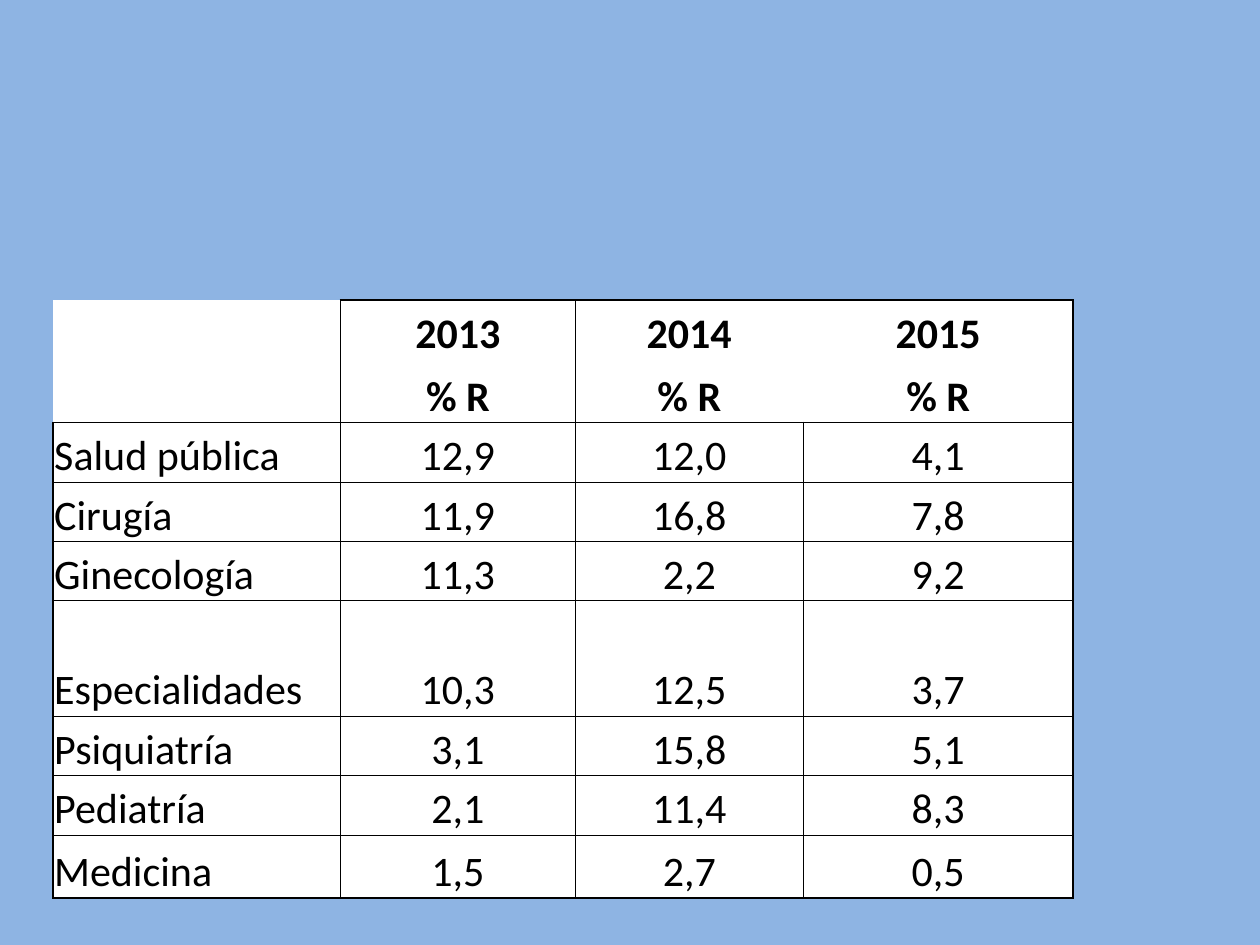
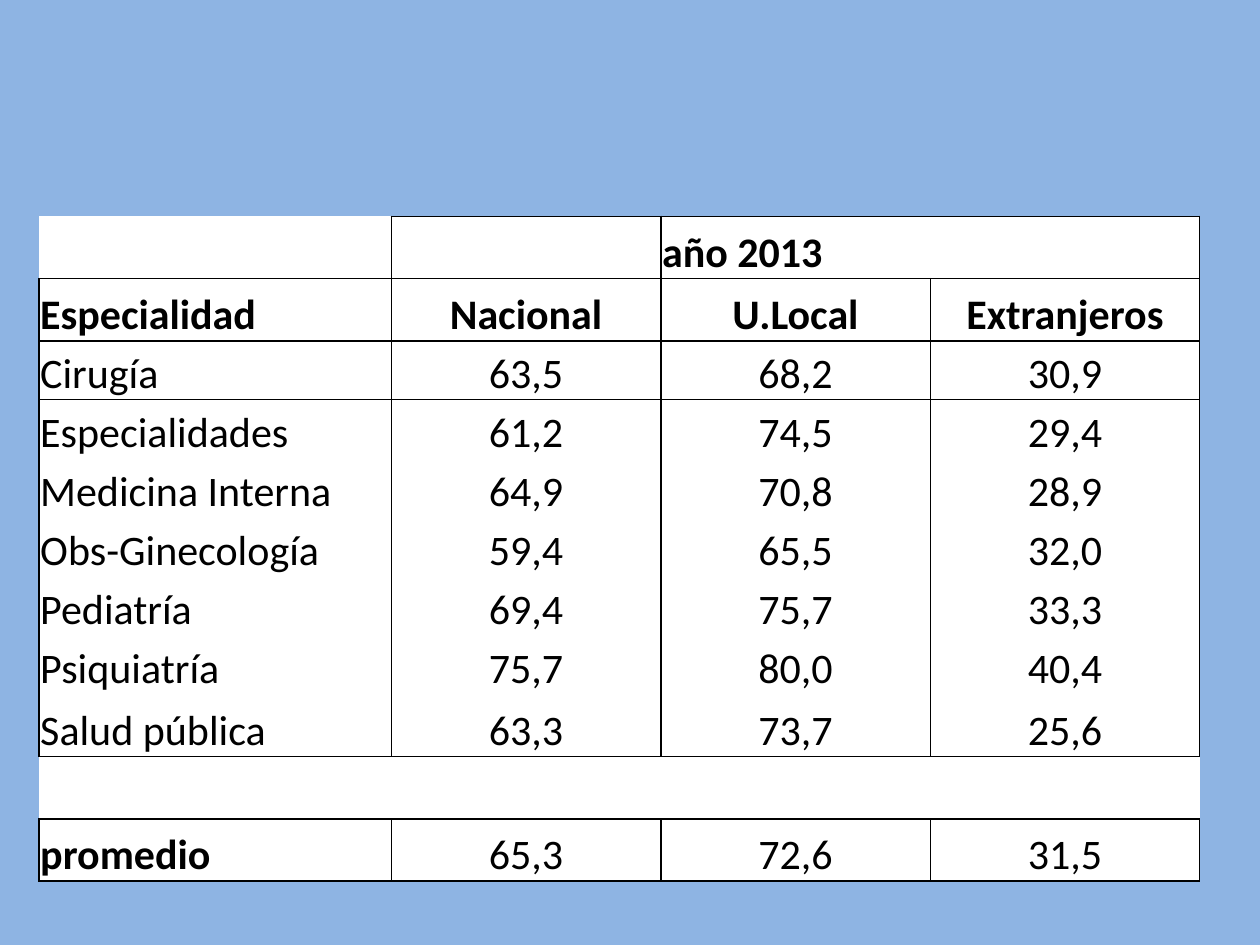
"""Builds two slides with tables of results by medical speciality."""
from lxml import etree
from pptx import Presentation
from pptx.dml.color import RGBColor
from pptx.enum.text import MSO_ANCHOR, PP_ALIGN
from pptx.oxml.ns import qn
from pptx.util import Pt

BACKGROUND = RGBColor(0x8E, 0xB4, 0xE3)
WHITE = RGBColor(0xFF, 0xFF, 0xFF)
BLACK = RGBColor(0x00, 0x00, 0x00)
FONT = "Calibri"
TEXT_SIZE = 24
CELL_INSET = 0.75
THIN, MEDIUM = 0.5, 1
PLAIN_TABLE_STYLE = "{2D5ABB26-0587-4C30-8999-92F81FD0307C}"
BLANK_LAYOUT = 6

BOTTOM = MSO_ANCHOR.BOTTOM
LEFT, CENTER, JUSTIFY = PP_ALIGN.LEFT, PP_ALIGN.CENTER, PP_ALIGN.JUSTIFY

REJECTION = [
    ("", "2013", "2014", "2015"),
    ("", "% R", "% R", "% R"),
    ("Salud pública", "12,9", "12,0", "4,1"),
    ("Cirugía", "11,9", "16,8", "7,8"),
    ("Ginecología", "11,3", "2,2", "9,2"),
    ("Especialidades", "10,3", "12,5", "3,7"),
    ("Psiquiatría", "3,1", "15,8", "5,1"),
    ("Pediatría", "2,1", "11,4", "8,3"),
    ("Medicina", "1,5", "2,7", "0,5"),
]
ORIGIN = [
    ("", "", "año 2013", ""),
    ("Especialidad", "Nacional", "U.Local", "Extranjeros"),
    ("Cirugía", "63,5", "68,2", "30,9"),
    ("Especialidades", "61,2", "74,5", "29,4"),
    ("Medicina Interna", "64,9", "70,8", "28,9"),
    ("Obs-Ginecología", "59,4", "65,5", "32,0"),
    ("Pediatría", "69,4", "75,7", "33,3"),
    ("Psiquiatría", "75,7", "80,0", "40,4"),
    ("Salud pública", "63,3", "73,7", "25,6"),
    ("", "", "", ""),
    ("promedio", "65,3", "72,6", "31,5"),
]


def add_slide(prs):
    """Add an empty slide on the shared background."""
    slide = prs.slides.add_slide(prs.slide_layouts[BLANK_LAYOUT])
    slide.background.fill.solid()
    slide.background.fill.fore_color.rgb = BACKGROUND
    return slide


def write(cell, text, *, bold=False, align=CENTER):
    """Write formatted text into a cell."""
    cell.vertical_anchor = BOTTOM
    cell.margin_left = cell.margin_right = cell.margin_top = Pt(CELL_INSET)
    cell.margin_bottom = 0
    paragraph = cell.text_frame.paragraphs[0]
    paragraph.alignment = align
    if text:
        run = paragraph.add_run()
        run.text = text
        run.font.name = FONT
        run.font.size = Pt(TEXT_SIZE)
        run.font.bold = bold
        run.font.color.rgb = BLACK


def frame(edges, first, last, width):
    """Record a line round a block of cells, on both sides of each edge."""
    (top, left), (bottom, right) = first, last
    for row in range(top, bottom + 1):
        edges[row, left, "L"] = edges[row, left - 1, "R"] = width
        edges[row, right, "R"] = edges[row, right + 1, "L"] = width
    for col in range(left, right + 1):
        edges[top, col, "T"] = edges[top - 1, col, "B"] = width
        edges[bottom, col, "B"] = edges[bottom + 1, col, "T"] = width


def draw_edges(cell, row, col, edges):
    """Draw the recorded lines of one cell."""
    properties = cell._tc.get_or_add_tcPr()
    for side in "LRTB":
        if (row, col, side) in edges:
            line = etree.SubElement(properties, qn(f"a:ln{side}"),
                                    w=str(Pt(edges[row, col, side])))
            fill = etree.SubElement(line, qn("a:solidFill"))
            etree.SubElement(fill, qn("a:srgbClr"), val=str(BLACK))


def add_grid(slide, rows, left, top, widths, heights, edges, bold_cells, align_at):
    """Add a white table with its text and lines."""
    table = slide.shapes.add_table(len(rows), len(widths), Pt(left), Pt(top),
                                   Pt(sum(widths)), Pt(sum(heights))).table
    table.first_row = table.horz_banding = False
    table._tbl.tblPr.find(qn("a:tableStyleId")).text = PLAIN_TABLE_STYLE
    for column, width in zip(table.columns, widths):
        column.width = Pt(width)
    for table_row, height in zip(table.rows, heights):
        table_row.height = Pt(height)
    for row, texts in enumerate(rows):
        for col, text in enumerate(texts):
            cell = table.cell(row, col)
            write(cell, text, bold=row < 2 or (row, col) in bold_cells,
                  align=align_at(row, col))
            draw_edges(cell, row, col, edges)
            cell.fill.solid()
            cell.fill.fore_color.rgb = WHITE


def add_rejection_table(slide):
    """Add the yearly percentages by speciality."""
    last = len(REJECTION) - 1
    edges = {}
    for row in range(2, last + 1):
        for col in range(4):
            frame(edges, (row, col), (row, col), THIN)
    for first, end in (((0, 1), (1, 3)), ((2, 0), (last, 0)), ((2, 1), (last, 3))):
        frame(edges, first, end, MEDIUM)
    add_grid(slide, REJECTION, 30.25, 171.4, (164.3, 134.2, 130.3, 154.2),
             (34, 36, 34, 34, 34, 65.8, 34, 34, 36), edges, (),
             lambda row, col: CENTER if col else JUSTIFY)


def add_origin_table(slide):
    """Add the 2013 values by speciality and origin, with their average."""
    average = len(ORIGIN) - 1
    edges = {}
    for first, end in (((0, 1), (0, 3)), ((1, 0), (1, 0)),
                       ((1, 1), (1, 1)), ((1, 2), (1, 3))):
        frame(edges, first, end, MEDIUM)
    for col in range(4):
        frame(edges, (2, col), (average - 2, col), MEDIUM)
        frame(edges, (average, col), (average, col), MEDIUM)
    add_grid(slide, ORIGIN, 22.25, 123.6, (201.4, 154, 154, 154),
             [35.6] * 2 + [33.7] * 6 + [35.6] * 3, edges, {(average, 0)},
             lambda row, col: CENTER if row and col else LEFT)


def main():
    """Build and save the presentation."""
    prs = Presentation()
    prs.slide_width, prs.slide_height = Pt(720), Pt(540)
    add_rejection_table(add_slide(prs))
    add_origin_table(add_slide(prs))
    prs.save("out.pptx")


if __name__ == "__main__":
    main()
